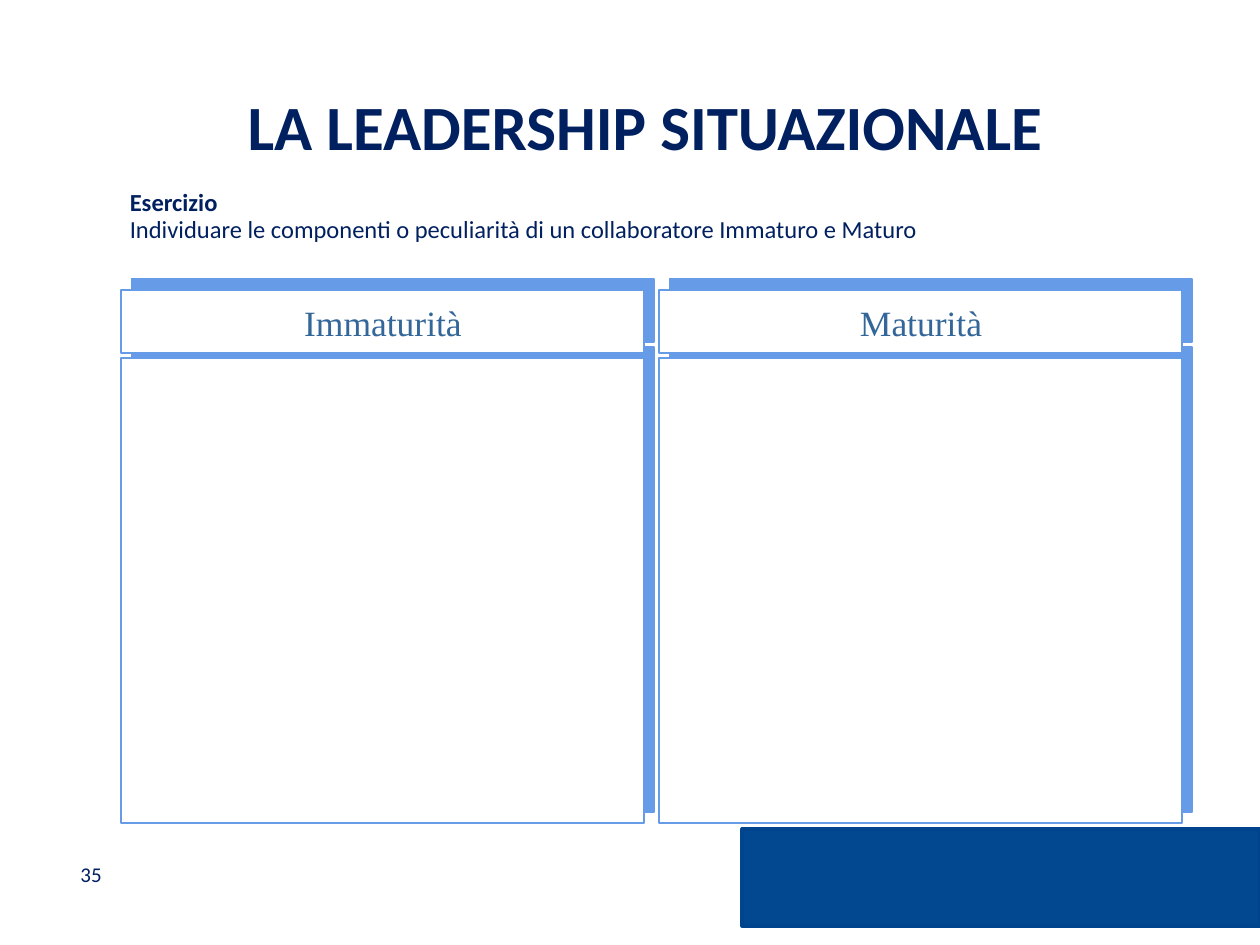
from lxml import etree
from pptx import Presentation
from pptx.dml.color import RGBColor
from pptx.enum.shapes import MSO_SHAPE
from pptx.enum.text import MSO_ANCHOR, MSO_AUTO_SIZE, PP_ALIGN
from pptx.oxml.ns import qn
from pptx.util import Inches, Pt

RECTANGLE = MSO_SHAPE.RECTANGLE
MIDDLE, TOP = MSO_ANCHOR.MIDDLE, MSO_ANCHOR.TOP
CENTER, LEFT = PP_ALIGN.CENTER, PP_ALIGN.LEFT
NO_AUTOFIT = MSO_AUTO_SIZE.NONE

# Content
TITLE = "LA LEADERSHIP SITUAZIONALE"
EXERCISE = [
    ("Esercizio", True),
    ("Individuare le componenti o peculiarità di un collaboratore Immaturo e Maturo", False),
]
COLUMNS = ["Immaturità", "Maturità"]
PAGE_NUMBER = "35"

# Style
NAVY, HEADING_BLUE, FRAME_BLUE = "002060", "336699", "669BE8"
BAND_FILL, BAND_LINE, WHITE = "014890", "00448D", "FFFFFF"
SANS, SERIF = "Calibri", "Times New Roman"

# Column grid, in inches
COLUMN_LEFT, COLUMN_STEP, COLUMN_WIDTH = 0.96, 4.27, 4.15
HEADER_TOP, HEADER_HEIGHT = 2.3, 0.5
PANEL_TOP, PANEL_HEIGHT = 2.84, 3.69


def color(hex_code):
    return RGBColor.from_string(hex_code)


def place(shape, left, top, width, height):
    shape.left, shape.top = Inches(left), Inches(top)
    shape.width, shape.height = Inches(width), Inches(height)


def add_run(paragraph, text, size, font_name, hex_code, bold=False):
    run = paragraph.add_run()
    run.text = text
    run.font.size, run.font.name, run.font.bold = Pt(size), font_name, bold
    run.font.color.rgb = color(hex_code)


def set_frame(frame, anchor):
    frame.word_wrap = True
    frame.auto_size = NO_AUTOFIT
    frame.vertical_anchor = anchor


def add_rectangle(slide, box, fill, line, line_width):
    rectangle = slide.shapes.add_shape(RECTANGLE, *map(Inches, box))
    rectangle.shadow.inherit = False
    rectangle.fill.solid()
    rectangle.fill.fore_color.rgb = color(fill)
    rectangle.line.color.rgb = color(line)
    rectangle.line.width = Pt(line_width)
    return rectangle


def add_framed_box(slide, box):
    """White box with a solid shadow towards the upper right."""
    framed = add_rectangle(slide, box, WHITE, FRAME_BLUE, 1)
    effects = framed._element.spPr.find(qn("a:effectLst"))
    shadow = etree.SubElement(effects, qn("a:outerShdw"), blurRad="0", dist=str(Pt(8.5)),
                              dir=str(315 * 60000), algn="ctr", rotWithShape="0")
    etree.SubElement(shadow, qn("a:srgbClr"), val=FRAME_BLUE)


def add_text(slide, box, anchor, align, *run_style, margin=None):
    frame = slide.shapes.add_textbox(*map(Inches, box)).text_frame
    set_frame(frame, anchor)
    if margin is not None:
        frame.margin_left = frame.margin_right = Inches(margin)
        frame.margin_top = frame.margin_bottom = Inches(margin)
    frame.paragraphs[0].alignment = align
    add_run(frame.paragraphs[0], *run_style)


def main():
    prs = Presentation()
    prs.slide_width, prs.slide_height = Inches(10), Inches(7.5)
    slide = prs.slides.add_slide(prs.slide_layouts[1])

    # Footer band and page number
    add_rectangle(slide, (5.89, 6.58, 4.11, 0.77), BAND_FILL, BAND_LINE, 2)
    add_text(slide, (0.54, 6.74, 2.33, 0.4), MIDDLE, LEFT, PAGE_NUMBER, 12, SANS, NAVY)

    # Title
    title = slide.shapes.title
    place(title, 0.98, 0.6, 8.28, 0.79)
    set_frame(title.text_frame, MIDDLE)
    heading = title.text_frame.paragraphs[0]
    heading.alignment = CENTER
    add_run(heading, TITLE, 36, SANS, NAVY, True)

    # Exercise instructions
    exercise = slide.placeholders[1]
    place(exercise, 0.93, 1.49, 8.61, 0.79)
    set_frame(exercise.text_frame, TOP)
    for index, (text, bold) in enumerate(EXERCISE):
        frame = exercise.text_frame
        paragraph = frame.add_paragraph() if index else frame.paragraphs[0]
        properties = paragraph._p.get_or_add_pPr()
        properties.set("marL", "0")
        properties.set("indent", "0")
        etree.SubElement(properties, qn("a:buNone"))
        paragraph.line_spacing = 0.75
        paragraph.space_before = Pt(2.8 if index else 0)
        add_run(paragraph, text, 14, SANS, NAVY, bold)

    # Two columns: empty panel, header box, header text
    for index, header in enumerate(COLUMNS):
        left = COLUMN_LEFT + index * COLUMN_STEP
        add_framed_box(slide, (left, PANEL_TOP, COLUMN_WIDTH, PANEL_HEIGHT))
        add_framed_box(slide, (left, HEADER_TOP, COLUMN_WIDTH, HEADER_HEIGHT))
        add_text(slide, (left + 0.02, HEADER_TOP + 0.09, 4.12, 0.34), TOP, CENTER,
                 header, 20.3, SERIF, HEADING_BLUE, margin=0)

    prs.save("out.pptx")


if __name__ == "__main__":
    main()
